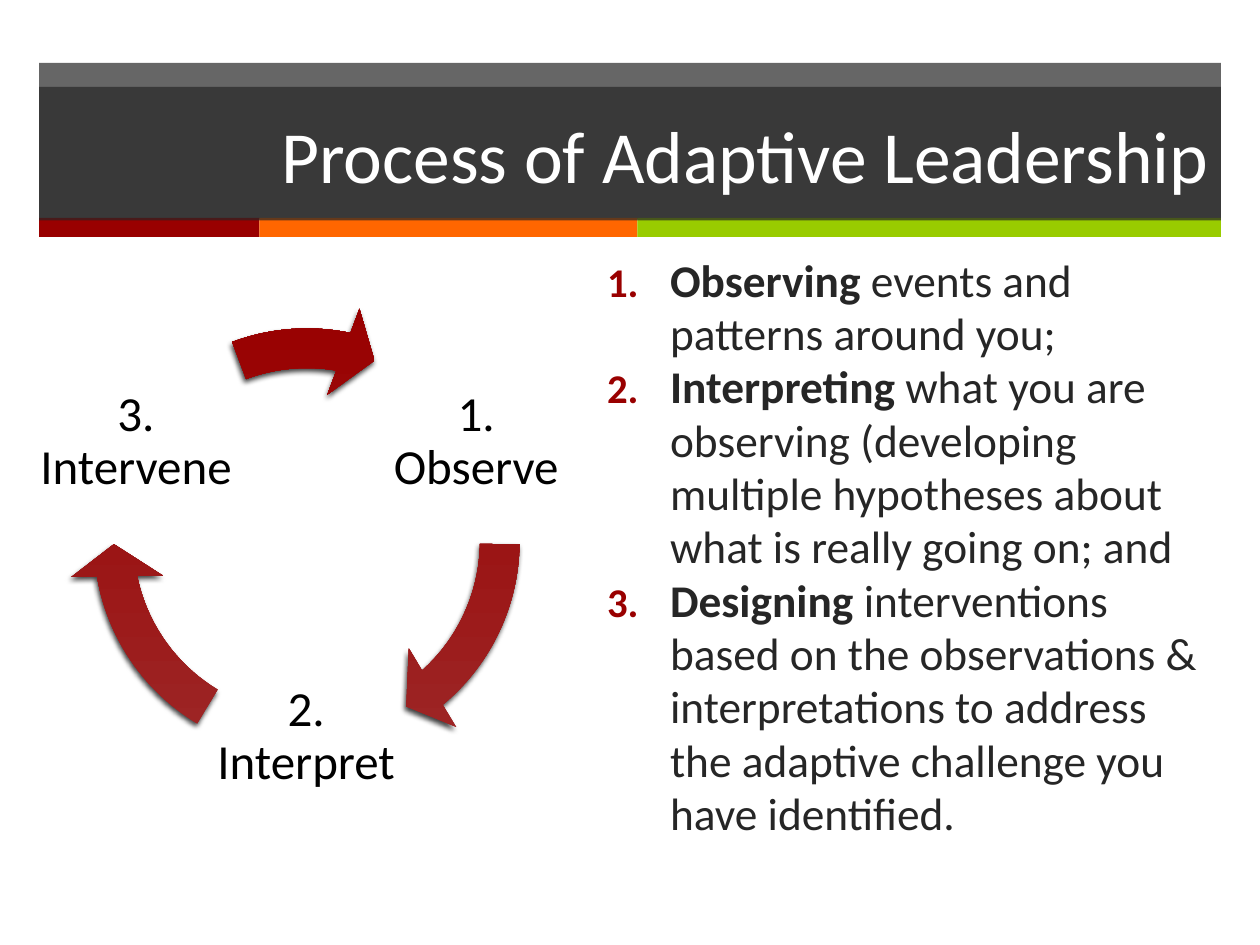
from lxml import etree
from pptx import Presentation
from pptx.dml.color import RGBColor
from pptx.enum import shapes, text
from pptx.oxml import ns
from pptx.util import Inches, Pt

RED, DARK, FONT = "990000", "262626", "Calibri"


def rgb(code):
    return RGBColor.from_string(code)


def add(node, tag, **attrs):
    child = etree.SubElement(node, ns.qn(tag))
    for key, val in attrs.items():
        child.set(key, str(val))
    return child


class Deck:
    def __init__(self):
        self.prs = Presentation()
        self.prs.slide_width, self.prs.slide_height = Inches(10), Inches(7.5)
        self.slide = self.prs.slides.add_slide(self.prs.slide_layouts[6])

    def shape(self, kind, box):
        item = self.slide.shapes.add_shape(kind, *map(Inches, box))
        item.shadow.inherit = False
        item.line.fill.background()
        return item

    def bar(self, box, color, alpha=None):
        item = self.shape(shapes.MSO_SHAPE.RECTANGLE, box)
        item.fill.solid()
        item.fill.fore_color.rgb = rgb(color)
        if alpha:
            tint = item._element.spPr.find(".//" + ns.qn("a:srgbClr"))
            add(tint, "a:alpha", val=alpha * 1000)
        return item

    def arrow(self, box, end, start):
        item = self.shape(shapes.MSO_SHAPE.CIRCULAR_ARROW, box)
        for i, val in enumerate((0.083, 5.764, end, start, 0.096)):
            item.adjustments[i] = val
        item.fill.gradient()
        item.fill.gradient_angle = 90
        for stop, color, pos in zip(item.fill.gradient_stops, ("9D2828", RED), (0, 1)):
            stop.color.rgb = rgb(color)
            stop.position = pos
        # Soft shadow below the arrow
        glow = add(item._element.spPr.find(ns.qn("a:effectLst")), "a:outerShdw",
                   blurRad=Pt(3), dist=Pt(2), dir=110 * 60000, rotWithShape=0)
        add(add(glow, "a:srgbClr", val="000000"), "a:alpha", val=75000)

    def style(self, para, size, color):
        for run in para.runs:
            run.font.name, run.font.size = FONT, Pt(size)
            run.font.color.rgb = rgb(color)

    def title(self, box, words):
        frame = self.bar(box, DARK, 70).text_frame
        frame.text = words
        frame.word_wrap = True
        frame.vertical_anchor = text.MSO_ANCHOR.MIDDLE
        para = frame.paragraphs[0]
        para.alignment = text.PP_ALIGN.RIGHT
        self.style(para, 42, "FFFFFF")

    def frame(self, box):
        frame = self.slide.shapes.add_textbox(*map(Inches, box)).text_frame
        frame.word_wrap = True
        return frame

    def label(self, box, words):
        frame = self.frame(box)
        frame.text = words
        frame.vertical_anchor = text.MSO_ANCHOR.MIDDLE
        frame.margin_left = frame.margin_right = Inches(0.04)
        frame.margin_top = frame.margin_bottom = Inches(0.04)
        para = frame.paragraphs[0]
        para.alignment = text.PP_ALIGN.CENTER
        para.line_spacing = 0.9
        self.style(para, 28, "000000")

    def steps(self, box, items):
        frame = self.frame(box)
        for i, (head, rest) in enumerate(items):
            para = frame.add_paragraph() if i else frame.paragraphs[0]
            para.line_spacing = 0.98
            for words, bold in ((head, True), (rest, False)):
                run = para.add_run()
                run.text = words
                run.font.bold = bold
            self.style(para, 25.9, DARK)
            # Red automatic number with a hanging indent
            props = para._p.get_or_add_pPr()
            props.set("marL", str(Inches(0.5)))
            props.set("indent", str(-Inches(0.5)))
            add(add(props, "a:buClr"), "a:srgbClr", val=RED)
            add(props, "a:buSzPct", val=90000)
            add(props, "a:buFont", typeface=FONT)
            add(props, "a:buAutoNum", type="arabicPeriod")


def main():
    deck = Deck()

    # Header band, colour strips and title
    deck.bar((0.31, 0.5, 9.38, 1.24), DARK, 70)
    left = 0.31
    for width, color in ((1.75, RED), (3, "FF6600"), (4.63, "99CC00")):
        deck.bar((left, 1.73, width, 0.15), color)
        left += width
    deck.title((0.31, 0.69, 9.38, 1.06), "Process of Adaptive Leadership")

    # Cycle: each label with the arrow that leaves it
    cycle = (
        ("1. Observe", 2.98, 2.71, 29.625, 0.526),
        ("2. Interpret", 1.63, 5.05, 101.709, 72.611),
        ("3. Intervene", 0.28, 2.71, 168.554, 149.681),
    )
    for words, x, y, end, start in cycle:
        deck.label((x, y, 1.6, 1.6), words)
        deck.arrow((0.54, 2.4, 3.79, 3.79), end, start)

    # Numbered explanation
    deck.steps((4.72, 1.97, 4.97, 5.32), (
        ("Observing", " events and patterns around you;"),
        ("Interpreting", " what you are observing (developing multiple "
         "hypotheses about what is really going on; and"),
        ("Designing", " interventions based on the observations & "
         "interpretations to address the adaptive challenge you have identified."),
    ))

    deck.prs.save("out.pptx")


if __name__ == "__main__":
    main()
